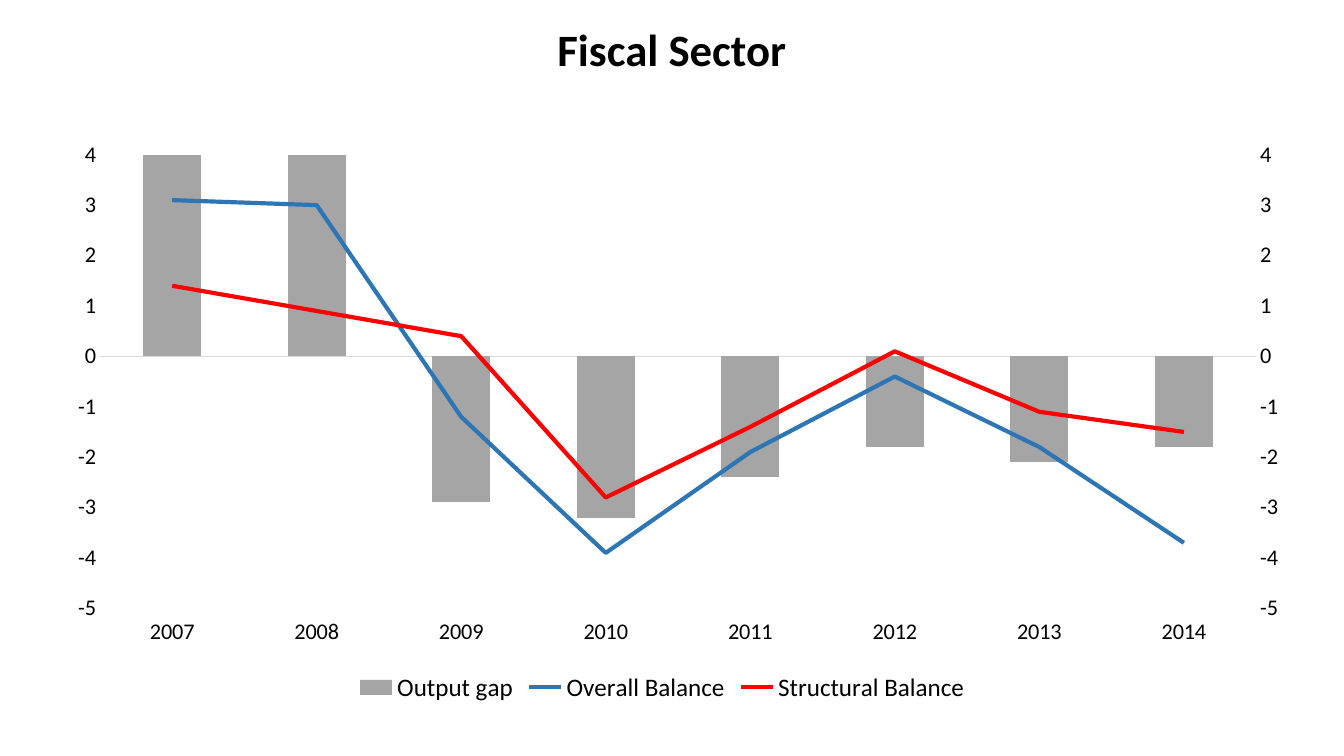
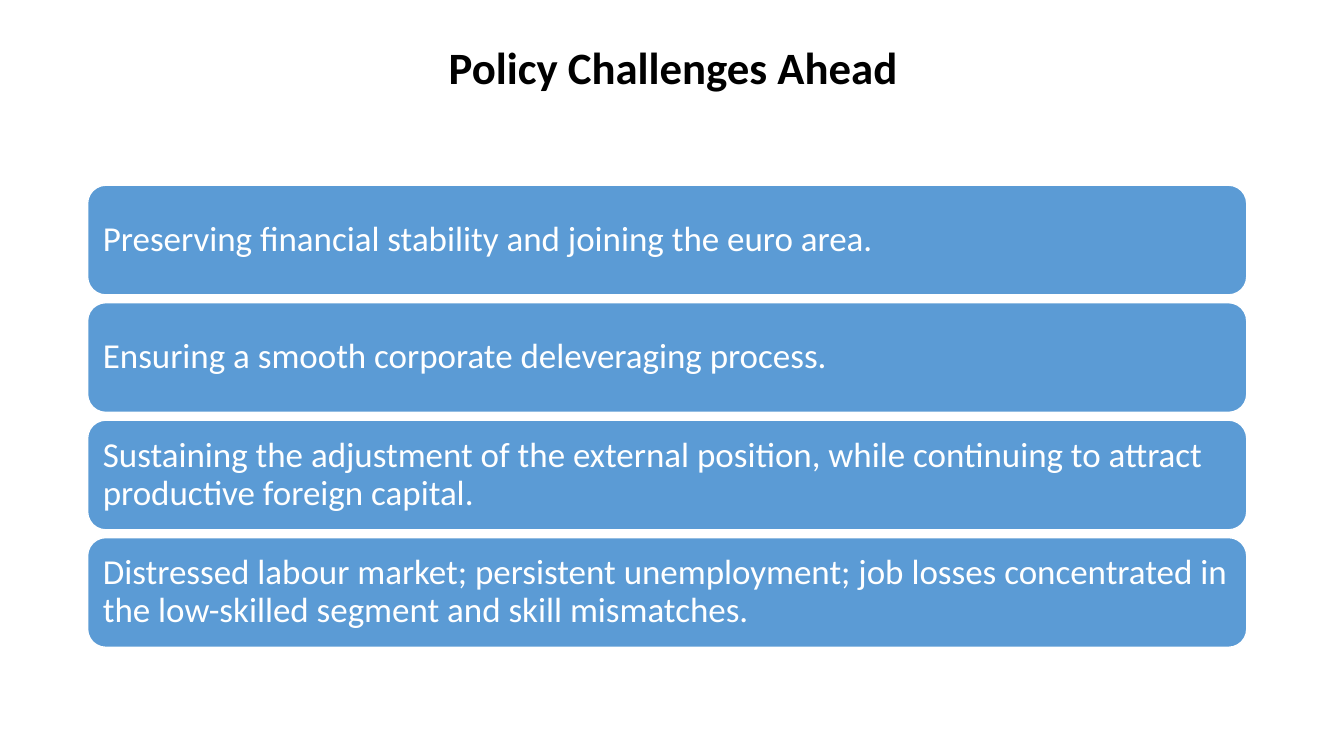
import copy
from dataclasses import dataclass

import pptx
import pptx.chart.data
import pptx.dml.color
import pptx.enum.chart
import pptx.enum.shapes
import pptx.enum.text
import pptx.oxml
import pptx.oxml.ns
import pptx.util

Pt = pptx.util.Pt
RGB = pptx.dml.color.RGBColor.from_string
qn = pptx.oxml.ns.qn


@dataclass(frozen=True)
class Theme:
    font: str = "Calibri"
    text: str = "000000"
    on_fill: str = "FFFFFF"
    card: str = "5B9BD5"
    output_gap: str = "A5A5A5"
    overall: str = "2E75B6"
    structural: str = "FF0000"
    zero_line: str = "D9D9D9"
    title_size: int = 32
    card_size: int = 25
    axis_size: int = 16
    legend_size: int = 18


THEME = Theme()

YEARS = [str(year) for year in range(2007, 2015)]
OUTPUT_GAP = ("Output gap", [4, 4.9, -2.9, -3.2, -2.4, -1.8, -2.1, -1.8])
BALANCES = [
    ("Overall Balance", [3.1, 3, -1.2, -3.9, -1.9, -0.4, -1.8, -3.7], THEME.overall),
    ("Structural Balance", [1.4, 0.9, 0.4, -2.8, -1.4, 0.1, -1.1, -1.5], THEME.structural),
]
CHALLENGES = [
    "Preserving financial stability and joining the euro area.",
    "Ensuring a smooth corporate deleveraging process.",
    "Sustaining the adjustment of the external position, while continuing "
    "to attract productive foreign capital.",
    "Distressed labour market; persistent unemployment; job losses concentrated "
    "in the low-skilled segment and skill mismatches.",
]


def set_font(font, size, color, bold=False):
    font.name = THEME.font
    font.size = Pt(size)
    font.bold = bold
    font.color.rgb = RGB(color)


def place(shape, left, top, width, height):
    shape.left, shape.top = Pt(left), Pt(top)
    shape.width, shape.height = Pt(width), Pt(height)


def add_titled_slide(deck, title, *box):
    slide = deck.slides.add_slide(deck.slide_layouts[5])
    heading = slide.shapes.title
    place(heading, *box)
    frame = heading.text_frame
    frame.text = title
    frame.auto_size = pptx.enum.text.MSO_AUTO_SIZE.NONE
    frame.vertical_anchor = pptx.enum.text.MSO_ANCHOR.MIDDLE
    paragraph = frame.paragraphs[0]
    paragraph.alignment = pptx.enum.text.PP_ALIGN.CENTER
    paragraph.line_spacing = 0.9
    set_font(paragraph.font, THEME.title_size, THEME.text, bold=True)
    return slide


def chart_xml(markup):
    return pptx.oxml.parse_xml(markup.replace(">", f" {pptx.oxml.ns.nsdecls('c')}>", 1))


def set_plot_area(chart, x, y, w, h):
    """Fix the inner plot area, in fractions of the chart."""
    plot_area = chart.plots[0]._element.getparent()
    for layout in plot_area.findall(qn("c:layout")):
        plot_area.remove(layout)
    sizes = "".join(f'<c:{key} val="{value}"/>' for key, value in zip("xywh", (x, y, w, h)))
    plot_area.insert(0, chart_xml(
        '<c:layout><c:manualLayout><c:layoutTarget val="inner"/>'
        f'<c:xMode val="edge"/><c:yMode val="edge"/>{sizes}</c:manualLayout></c:layout>'))


def move_to_right_axis(chart, series_list):
    """Turn column series into lines on a second pair of axes."""
    bars = chart.plots[0]._element
    lines = chart_xml(
        '<c:lineChart><c:grouping val="standard"/><c:varyColors val="0"/>'
        '<c:marker val="1"/><c:axId val="5001"/><c:axId val="5002"/></c:lineChart>')
    for series in series_list:
        element = series._element
        for invert in element.findall(qn("c:invertIfNegative")):
            element.remove(invert)
        lines.find(qn("c:marker")).addprevious(element)
    bars.addnext(lines)

    years, values = chart.category_axis._element, chart.value_axis._element
    right_years, right_values = copy.deepcopy(years), copy.deepcopy(values)
    values.addnext(right_values)
    right_values.addnext(right_years)
    settings = [
        (right_years, {"axId": "5001", "crossAx": "5002", "delete": "1"}),
        (right_values, {"axId": "5002", "crossAx": "5001", "axPos": "r", "crosses": "max"}),
    ]
    for axis, changes in settings:
        for tag, value in changes.items():
            axis.find(qn(f"c:{tag}")).set("val", value)


def format_axes(chart):
    enums = pptx.enum.chart
    years, values = chart.category_axis, chart.value_axis
    for axis in (years, values):
        axis.has_major_gridlines = False
        axis.major_tick_mark = enums.XL_TICK_MARK.NONE
        axis.minor_tick_mark = enums.XL_TICK_MARK.NONE
        set_font(axis.tick_labels.font, THEME.axis_size, THEME.text)
    years.tick_label_position = enums.XL_TICK_LABEL_POSITION.LOW
    years.format.line.color.rgb = RGB(THEME.zero_line)
    years.format.line.width = Pt(0.75)
    values.format.line.fill.background()
    values.minimum_scale, values.maximum_scale, values.major_unit = -5, 4, 1


def add_fiscal_chart(slide, *box):
    enums = pptx.enum.chart
    data = pptx.chart.data.CategoryChartData()
    data.categories = YEARS
    data.add_series(*OUTPUT_GAP)
    for name, values, _ in BALANCES:
        data.add_series(name, values)
    chart = slide.shapes.add_chart(
        enums.XL_CHART_TYPE.COLUMN_CLUSTERED, *map(Pt, box), data).chart
    chart.has_title = False
    set_font(chart.font, THEME.axis_size, THEME.text)
    format_axes(chart)
    columns = chart.plots[0]
    columns.gap_width = 150
    columns.vary_by_categories = False
    gap, *balances = columns.series
    gap.invert_if_negative = False
    gap.format.fill.solid()
    gap.format.fill.fore_color.rgb = RGB(THEME.output_gap)

    move_to_right_axis(chart, balances)
    for balance, (_, _, color) in zip(chart.plots[1].series, BALANCES):
        balance.format.line.color.rgb = RGB(color)
        balance.format.line.width = Pt(3)
        balance.marker.style = enums.XL_MARKER_STYLE.NONE
        balance.smooth = False
    set_plot_area(chart, 0.039, 0.036, 0.948, 0.791)
    chart.has_legend = True
    chart.legend.position = enums.XL_LEGEND_POSITION.BOTTOM
    chart.legend.include_in_layout = False
    set_font(chart.legend.font, THEME.legend_size, THEME.text)


def add_card(slide, text, *box):
    card = slide.shapes.add_shape(
        pptx.enum.shapes.MSO_SHAPE.ROUNDED_RECTANGLE, *map(Pt, box))
    card.shadow.inherit = False
    card.fill.solid()
    card.fill.fore_color.rgb = RGB(THEME.card)
    card.line.color.rgb = RGB(THEME.on_fill)
    card.line.width = Pt(1)
    frame = card.text_frame
    frame.text = text
    frame.word_wrap = True
    frame.vertical_anchor = pptx.enum.text.MSO_ANCHOR.MIDDLE
    frame.margin_left = frame.margin_right = Pt(7.2)
    frame.margin_top = frame.margin_bottom = Pt(7.2)
    paragraph = frame.paragraphs[0]
    paragraph.alignment = pptx.enum.text.PP_ALIGN.LEFT
    paragraph.line_spacing = 0.9
    set_font(paragraph.font, THEME.card_size, THEME.on_fill)


def add_card_stack(slide, texts, left, top, width, height, gap):
    for row, text in enumerate(texts):
        add_card(slide, text, left, top + row * (height + gap), width, height)


def main():
    deck = pptx.Presentation()
    deck.slide_width, deck.slide_height = Pt(960), Pt(540)

    fiscal = add_titled_slide(deck, "Fiscal Sector", 66, 18.7, 828, 36.7)
    add_fiscal_chart(fiscal, 37.4, 95.8, 875.5, 409.7)

    challenges = add_titled_slide(deck, "Policy Challenges Ahead", 67, 19.4, 828, 61.2)
    add_card_stack(challenges, CHALLENGES, left=62.6, top=132.3, width=828, height=78.4, gap=5.5)

    deck.save("out.pptx")


if __name__ == "__main__":
    main()
